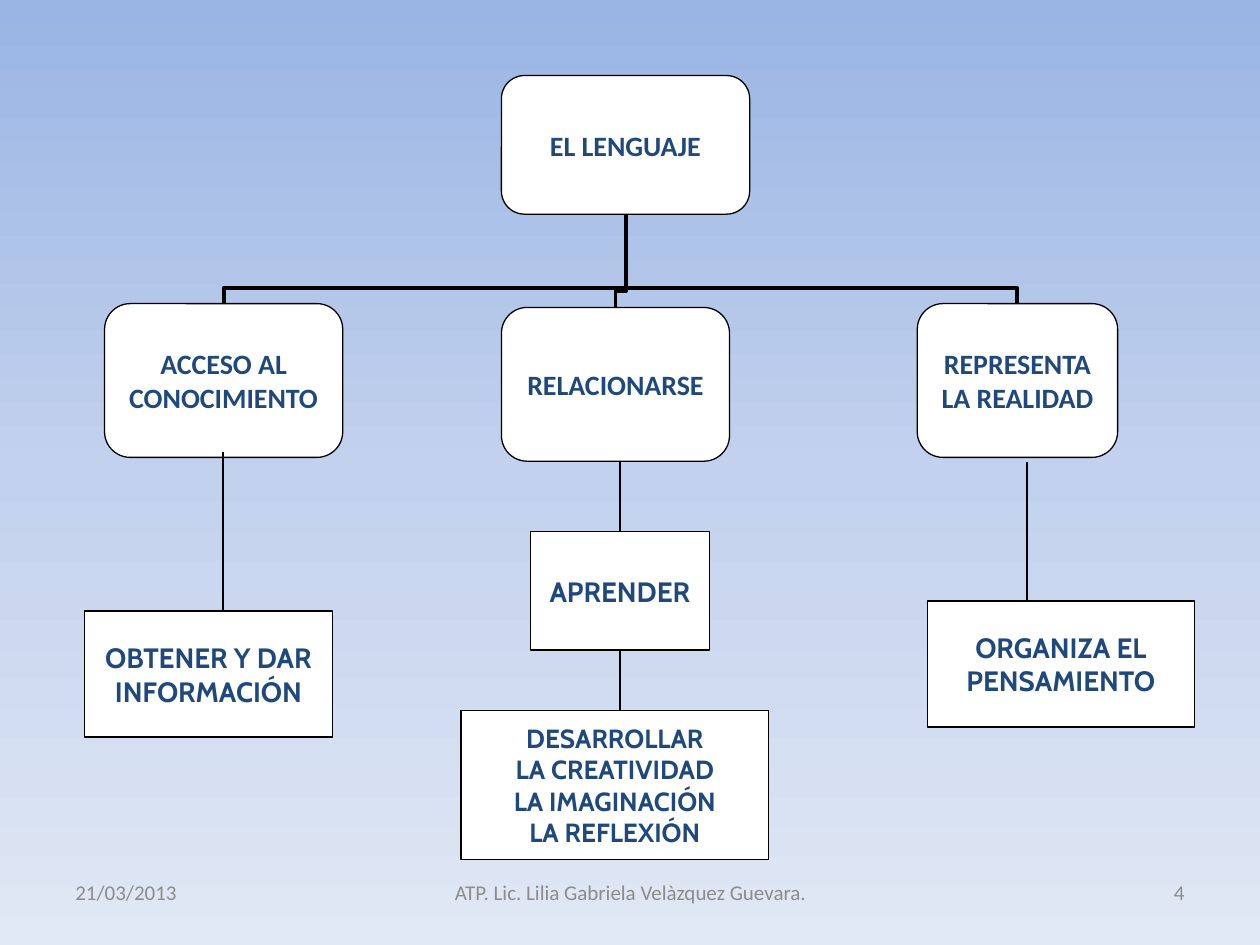
"""Build a concept map slide about the uses of language."""
from copy import deepcopy

from lxml import etree
from pptx import Presentation
from pptx.dml.color import RGBColor
from pptx.enum.shapes import MSO_CONNECTOR, MSO_SHAPE
from pptx.enum.text import MSO_ANCHOR, PP_ALIGN
from pptx.oxml.ns import qn
from pptx.util import Inches, Pt

ROUND, RECT = MSO_SHAPE.ROUNDED_RECTANGLE, MSO_SHAPE.RECTANGLE
ELBOW, STRAIGHT = MSO_CONNECTOR.ELBOW, MSO_CONNECTOR.STRAIGHT
LEFT, CENTER, RIGHT = PP_ALIGN.LEFT, PP_ALIGN.CENTER, PP_ALIGN.RIGHT
MIDDLE = MSO_ANCHOR.MIDDLE
TOP_SITE, BOTTOM_SITE = 0, 2

BLACK = RGBColor(0x00, 0x00, 0x00)
WHITE = RGBColor(0xFF, 0xFF, 0xFF)
NAVY = RGBColor(0x1F, 0x49, 0x7D)
GRAY = RGBColor(0x8C, 0x8C, 0x8C)
SKY = [RGBColor(0x9A, 0xB5, 0xE4), RGBColor(0xC2, 0xD1, 0xED), RGBColor(0xE1, 0xE8, 0xF5)]

prs = Presentation()
prs.slide_width, prs.slide_height = Inches(10), Inches(7.5)
COL, ROW = prs.slide_width / 100, prs.slide_height / 75
s = prs.slides.add_slide(prs.slide_layouts[6])

fill = s.background.fill
fill.gradient()
fill.gradient_angle = 270
stops = s._element.find(".//" + qn("a:gsLst"))
stops.append(deepcopy(stops[0]))
for i, (stop, color) in enumerate(zip(fill.gradient_stops, SKY)):
    stop.position = i / 2
    stop.color.rgb = color


def write(sp, text, align, color, wrap, **font):
    tf = sp.text_frame
    tf.text = text
    tf.word_wrap, tf.vertical_anchor = wrap, MIDDLE
    for p in tf.paragraphs:
        p.alignment = align
        for r in p.runs:
            r.font.color.rgb = color
            for key, value in font.items():
                setattr(r.font, key, value)
    return tf


def connect(kind, x1, y1, x2, y2, weight):
    cxn = s.shapes.add_connector(kind, *(int(v) for v in (x1, y1, x2, y2)))
    cxn.line.color.rgb, cxn.line.width = BLACK, Pt(weight)
    etree.SubElement(cxn._element.spPr, qn("a:effectLst"))
    return cxn


FOOTERS = [
    ("21/03/2013", 5, 23.3, LEFT),
    ("ATP. Lic. Lilia Gabriela Velàzquez Guevara.", 34.2, 31.7, CENTER),
    ("4", 71.7, 23.3, RIGHT),
]
for text, x, w, align in FOOTERS:
    sp = s.shapes.add_textbox(int(x * COL), int(68.3 * ROW), int(w * COL), int(5 * ROW))
    write(sp, text, align, GRAY, True, name="Calibri", size=Pt(12))

BOXES = [
    ("EL LENGUAJE", ROUND, 39.8, 6, 19.7, 11, 16),
    ("ACCESO AL\nCONOCIMIENTO", ROUND, 8.3, 24.1, 18.9, 12.2, 16),
    ("RELACIONARSE", ROUND, 39.8, 24.4, 18.1, 12.2, 16),
    ("REPRESENTA\nLA REALIDAD", ROUND, 72.8, 24.1, 15.9, 12.2, 16),
    ("OBTENER Y DAR\nINFORMACIÓN", RECT, 6.7, 48.5, 19.7, 10, 16),
    ("APRENDER", RECT, 42.1, 42.2, 14.2, 9.4, 16),
    ("DESARROLLAR\nLA CREATIVIDAD\nLA IMAGINACIÓN\nLA REFLEXIÓN", RECT, 36.6, 56.4, 24.4, 11.8, 15),
    ("ORGANIZA EL\nPENSAMIENTO", RECT, 73.6, 47.7, 21.2, 10, 16),
]
boxes = []
for text, shape, x, y, w, h, size in BOXES:
    sp = s.shapes.add_shape(shape, int(x * COL), int(y * ROW), int(w * COL), int(h * ROW))
    sp.shadow.inherit = False
    sp.fill.solid()
    sp.fill.fore_color.rgb = WHITE
    sp.line.color.rgb, sp.line.width = BLACK, Pt(0.75)
    font = "Calibri" if shape == ROUND else "Cabin"
    tf = write(sp, text, CENTER, NAVY, False, name=font, size=Pt(size), bold=True)
    if shape == ROUND:
        for side in ("left", "top", "right", "bottom"):
            setattr(tf, "margin_" + side, 0)
    boxes.append(sp)

language, access, relate, represent, obtain, learn, develop, organize = boxes
x2, y2 = language.left + language.width // 2, language.top + language.height
for child in (represent, relate, access):
    x1, y1 = child.left + child.width // 2, child.top
    cxn = connect(ELBOW, x1, y1, x2, y2, 2.25)
    cxn.begin_connect(child, TOP_SITE)
    cxn.end_connect(language, BOTTOM_SITE)
    w, h = y1 - y2, abs(x2 - x1)
    cxn.left, cxn.top = (x1 + x2 - w) // 2, (y1 + y2 - h) // 2
    cxn.width, cxn.height = w, h
    xfrm = cxn._element.spPr.find(qn("a:xfrm"))
    xfrm.set("rot", str((90 if x1 > x2 else 270) * 60000))
    xfrm.set("flipV", "0")
    guides = cxn._element.spPr.find(qn("a:prstGeom")).find(qn("a:avLst"))
    etree.SubElement(guides, qn("a:gd"), name="adj1", fmla="val 17500")
    s.shapes._spTree.insert(2, cxn._element)

LINKS = [
    (49.2, 36.7, learn.top, None, learn),
    (49.2, 51.6, develop.top, learn, None),
    (17.7, 35.9, obtain.top, None, None),
    (81.5, 36.7, organize.top, None, None),
]
for x, y, bottom, start, end in LINKS:
    cxn = connect(STRAIGHT, x * COL, y * ROW, x * COL, bottom, 0.75)
    if start:
        cxn.begin_connect(start, BOTTOM_SITE)
    if end:
        cxn.end_connect(end, TOP_SITE)

prs.save("out.pptx")
